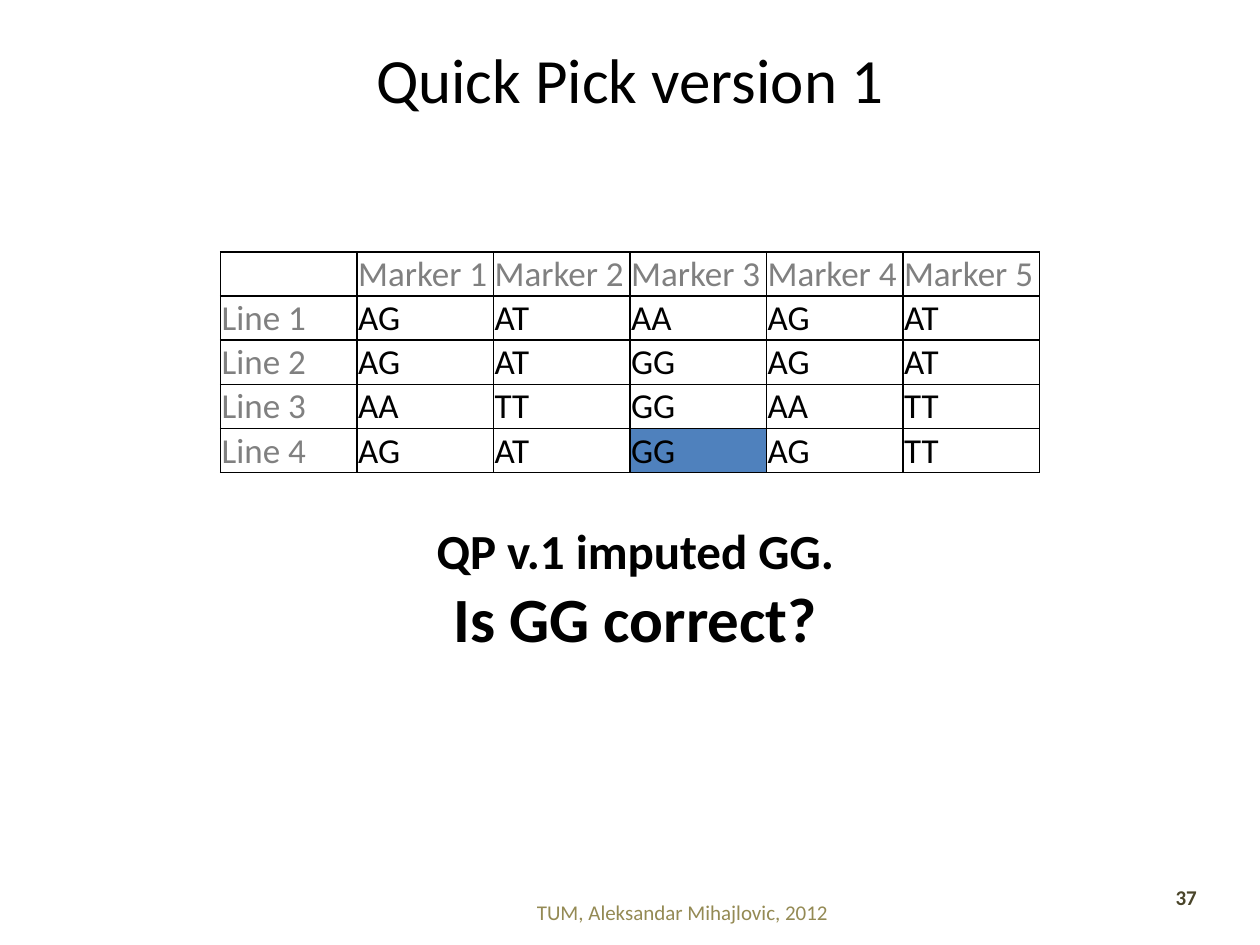
"""Build the Quick Pick slide with its marker table."""
from dataclasses import dataclass

from lxml.etree import SubElement
from pptx import Presentation
from pptx.dml.color import RGBColor
from pptx.enum.text import MSO_ANCHOR, PP_ALIGN
from pptx.oxml.ns import qn
from pptx.util import Pt

BLACK = RGBColor(0x00, 0x00, 0x00)
GREY = RGBColor(0x80, 0x80, 0x80)
BLUE = RGBColor(0x4F, 0x81, 0xBD)
TAN = RGBColor(0x94, 0x8A, 0x54)
BROWN = RGBColor(0x4A, 0x45, 0x2A)

GENES = ["AG AT AA AG AT", "AG AT GG AG AT", "AA TT GG AA TT", "AG AT GG AG TT"]
ROWS = [["", *(f"Marker {n}" for n in range(1, 6))]]
ROWS += [[f"Line {n}", *line.split()] for n, line in enumerate(GENES, 1)]
IMPUTED = (4, 3)


@dataclass
class Line:
    text: str
    size: float
    color: RGBColor = BLACK
    bold: bool = False


@dataclass
class Box:
    left: float
    top: float
    width: float
    height: float
    lines: list[Line]
    align: PP_ALIGN = PP_ALIGN.CENTER
    anchor: MSO_ANCHOR = MSO_ANCHOR.TOP


BOXES = [
    Box(36, 0, 648, 90, [Line("Quick Pick version 1", 36)], anchor=MSO_ANCHOR.MIDDLE),
    Box(182, 507, 416, 28, [Line("TUM, Aleksandar Mihajlovic, 2012", 12, TAN)],
        anchor=MSO_ANCHOR.MIDDLE),
    Box(627, 502, 64, 28, [Line("37", 12, BROWN, True)], PP_ALIGN.RIGHT),
    Box(126, 294, 474, 85, [Line("QP v.1 imputed GG.", 28, bold=True),
                            Line("Is GG correct?", 36, bold=True)]),
]


def write(para, text: str, *, size: float, color: RGBColor = BLACK,
          bold: bool = False, align: PP_ALIGN = PP_ALIGN.LEFT) -> None:
    """Add formatted text to a paragraph."""
    para.alignment = align
    run = para.add_run()
    run.text = text
    font = run.font
    font.name, font.size, font.bold = "Calibri", Pt(size), bold
    font.color.rgb = color


def draw_box(slide, box: Box) -> None:
    """Draw a text box with one paragraph per line."""
    area = map(Pt, (box.left, box.top, box.width, box.height))
    frame = slide.shapes.add_textbox(*area).text_frame
    frame.word_wrap = True
    frame.vertical_anchor = box.anchor
    for i, line in enumerate(box.lines):
        para = frame.add_paragraph() if i else frame.paragraphs[0]
        write(para, line.text, size=line.size, color=line.color,
              bold=line.bold, align=box.align)


def frame_cell(cell) -> None:
    """Give a cell thin black borders on all sides."""
    props = cell._tc.get_or_add_tcPr()
    for side in ("lnL", "lnR", "lnT", "lnB"):
        edge = SubElement(props, qn(f"a:{side}"), w=str(Pt(1)))
        fill = SubElement(edge, qn("a:solidFill"))
        SubElement(fill, qn("a:srgbClr"), val=str(BLACK))


def draw_table(slide, rows: list[list[str]]) -> None:
    """Draw the marker table and shade the imputed cell."""
    shape = slide.shapes.add_table(len(rows), len(rows[0]),
                                   Pt(126), Pt(144), Pt(468), Pt(126))
    table = shape.table
    table.first_row = table.horz_banding = False
    for r, row in enumerate(rows):
        for c, text in enumerate(row):
            cell = table.cell(r, c)
            cell.margin_left = cell.margin_right = cell.margin_top = Pt(0.7)
            cell.margin_bottom = Pt(0)
            cell.vertical_anchor = MSO_ANCHOR.BOTTOM
            frame_cell(cell)
            if (r, c) == IMPUTED:
                cell.fill.solid()
                cell.fill.fore_color.rgb = BLUE
            else:
                cell.fill.background()
            if text:
                write(cell.text_frame.paragraphs[0], text, size=20,
                      color=BLACK if r and c else GREY)


def main() -> None:
    """Build and save the slide."""
    deck = Presentation()
    deck.slide_width, deck.slide_height = Pt(720), Pt(540)
    slide = deck.slides.add_slide(deck.slide_layouts[6])
    draw_table(slide, ROWS)
    for box in BOXES:
        draw_box(slide, box)
    deck.save("out.pptx")


if __name__ == "__main__":
    main()
